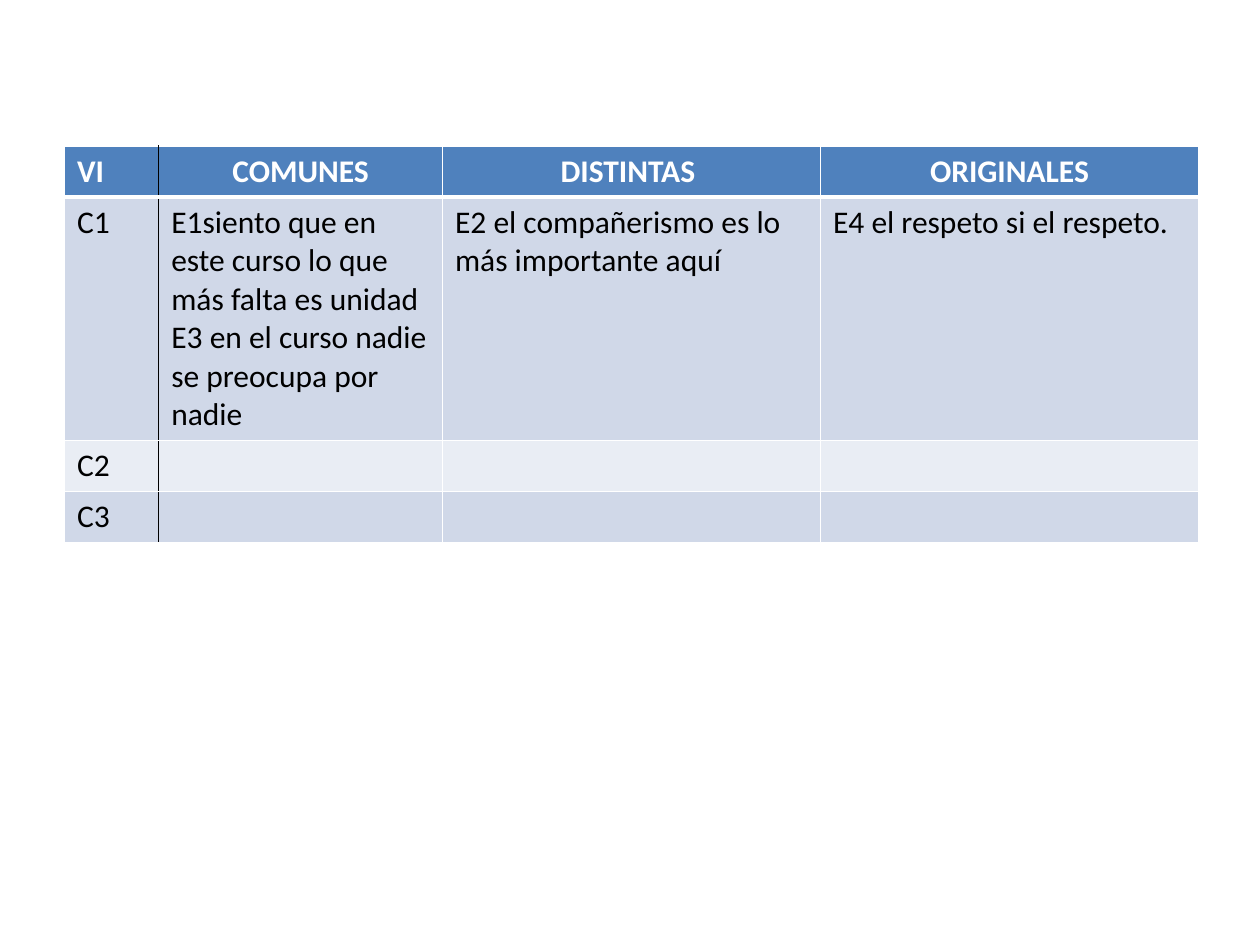
import lxml.etree
import pptx
import pptx.dml.color
import pptx.enum.text
import pptx.oxml.ns
import pptx.util

Cm = pptx.util.Cm
RGBColor = pptx.dml.color.RGBColor
WHITE = RGBColor(0xFF, 0xFF, 0xFF)
BLACK = RGBColor(0x00, 0x00, 0x00)
HEADER_BLUE = RGBColor(0x4F, 0x81, 0xBD)
BAND_DARK = RGBColor(0xD0, 0xD8, 0xE8)
BAND_LIGHT = RGBColor(0xE9, 0xED, 0xF4)

COLUMN_WIDTHS = [1.9, 5.72, 7.62, 7.62]
ROW_HEIGHT = 1.03
ROW_FILLS = [HEADER_BLUE, BAND_DARK, BAND_LIGHT, BAND_DARK]
ROWS = [
    ["VI", "COMUNES", "DISTINTAS ", "ORIGINALES"],
    [
        "C1",
        "E1siento que en este curso lo que más falta es unidad\n"
        "E3 en el curso nadie se preocupa por nadie",
        "E2 el compañerismo es lo más importante aquí",
        "E4 el respeto si el respeto.",
    ],
    ["C2", "", "", ""],
    ["C3", "", "", ""],
]


def add_border(cell, side, color, points):
    properties = cell._tc.get_or_add_tcPr()
    qn = pptx.oxml.ns.qn
    line = lxml.etree.SubElement(properties, qn(f"a:ln{side}"), w=str(pptx.util.Pt(points)))
    fill = lxml.etree.SubElement(line, qn("a:solidFill"))
    lxml.etree.SubElement(fill, qn("a:srgbClr"), val=str(color))


presentation = pptx.Presentation()
presentation.slide_width = Cm(25.4)
presentation.slide_height = Cm(19.05)
slide = presentation.slides.add_slide(presentation.slide_layouts[6])

table = slide.shapes.add_table(
    len(ROWS), len(COLUMN_WIDTHS),
    Cm(1.3), Cm(2.94), Cm(sum(COLUMN_WIDTHS)), Cm(ROW_HEIGHT * len(ROWS)),
).table
for column, width in zip(table.columns, COLUMN_WIDTHS):
    column.width = Cm(width)

for row_index, texts in enumerate(ROWS):
    table.rows[row_index].height = Cm(ROW_HEIGHT)
    is_header = row_index == 0
    for column_index, text in enumerate(texts):
        cell = table.cell(row_index, column_index)
        add_border(cell, "L", BLACK if column_index == 1 else WHITE, 1)
        add_border(cell, "R", BLACK if column_index == 0 else WHITE, 1)
        add_border(cell, "T", WHITE, 3 if row_index == 1 else 1)
        add_border(cell, "B", WHITE, 3 if is_header else 1)
        cell.fill.solid()
        cell.fill.fore_color.rgb = ROW_FILLS[row_index]
        cell.text_frame.text = text
        for paragraph in cell.text_frame.paragraphs:
            if is_header and column_index > 0:
                paragraph.alignment = pptx.enum.text.PP_ALIGN.CENTER
            for run in paragraph.runs:
                run.font.name = "Calibri"
                run.font.size = pptx.util.Pt(18)
                run.font.bold = is_header
                run.font.color.rgb = WHITE if is_header else BLACK

presentation.save("out.pptx")
